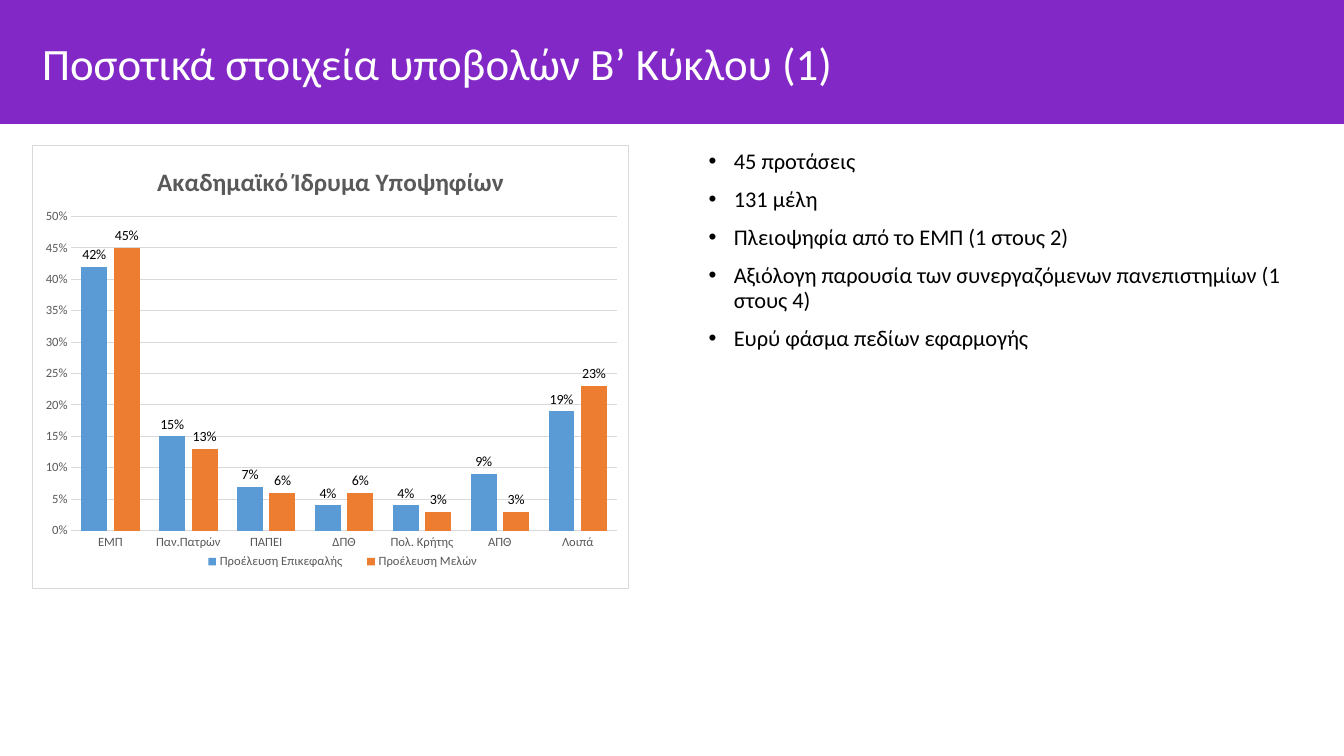
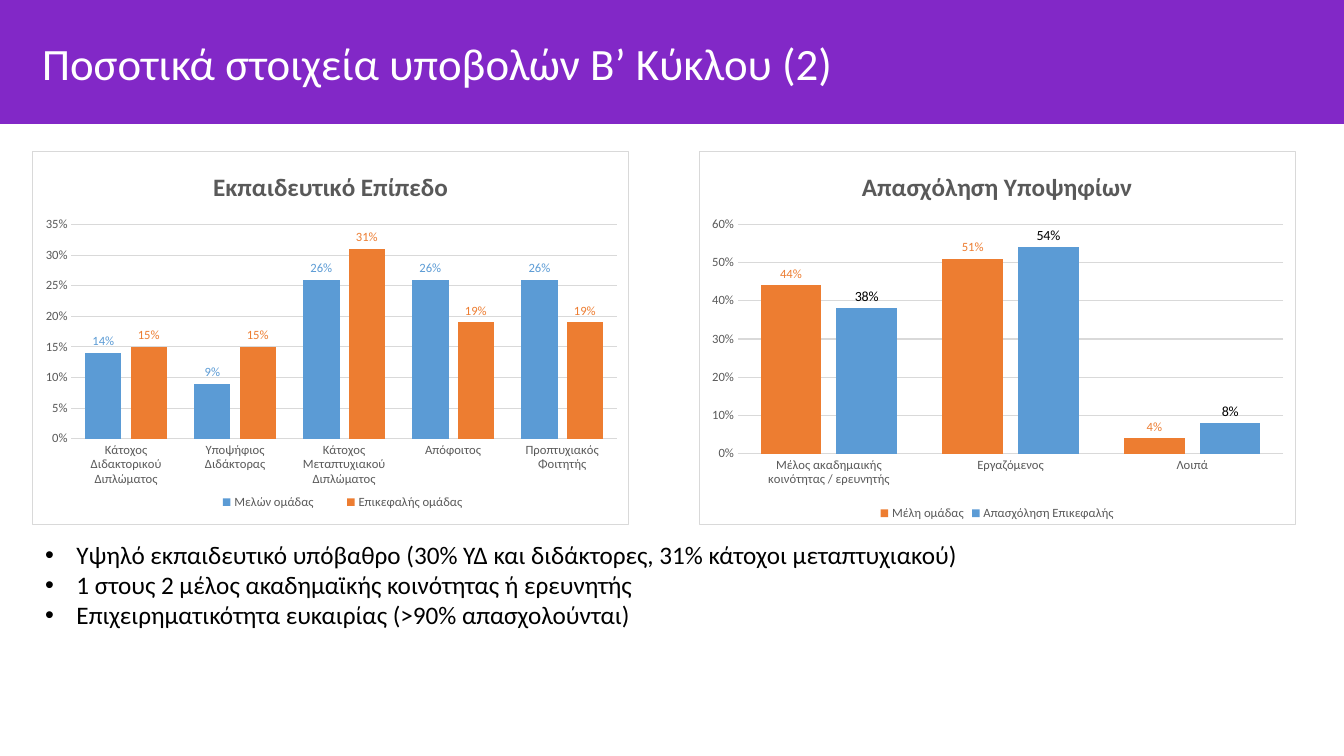
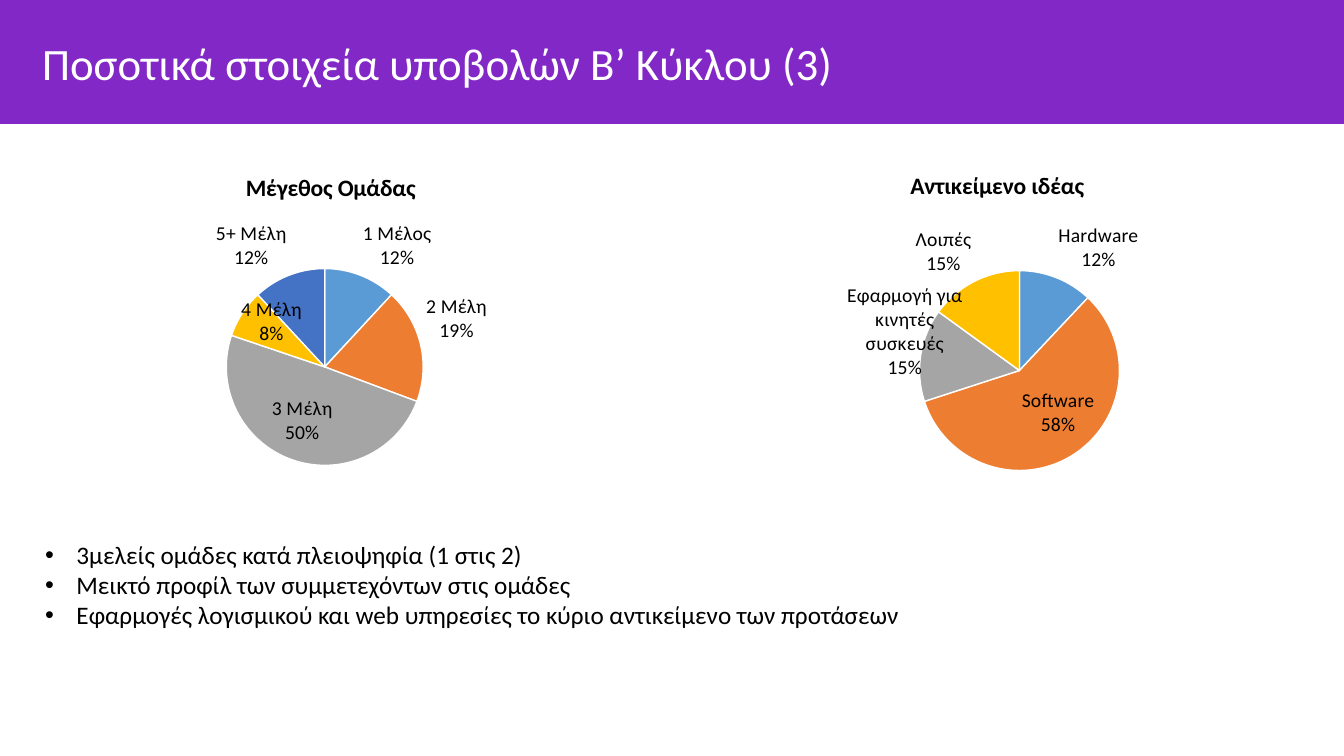
from pptx import Presentation
from pptx.chart.data import CategoryChartData
from pptx.dml.color import RGBColor
from pptx.enum.chart import XL_CHART_TYPE, XL_LABEL_POSITION, XL_LEGEND_POSITION, XL_TICK_MARK
from pptx.enum.shapes import MSO_SHAPE
from pptx.enum.text import MSO_ANCHOR
from pptx.oxml import parse_xml
from pptx.oxml.ns import nsdecls, qn
from pptx.oxml.xmlchemy import OxmlElement
from pptx.util import Inches, Pt

COLUMNS, PIE = XL_CHART_TYPE.COLUMN_CLUSTERED, XL_CHART_TYPE.PIE
OUTSIDE, CENTER = XL_LABEL_POSITION.OUTSIDE_END, XL_LABEL_POSITION.CENTER
INSIDE = XL_LABEL_POSITION.INSIDE_END
BOTTOM, NO_TICK = XL_LEGEND_POSITION.BOTTOM, XL_TICK_MARK.NONE

PURPLE = RGBColor(0x82, 0x28, 0xC7)
WHITE = RGBColor(0xFF, 0xFF, 0xFF)
BLACK = RGBColor(0, 0, 0)
GRAY = RGBColor(0x59, 0x59, 0x59)
RULE = RGBColor(0xD9, 0xD9, 0xD9)
BLUE = RGBColor(0x5B, 0x9B, 0xD5)
ORANGE = RGBColor(0xED, 0x7D, 0x31)
SILVER = RGBColor(0xA5, 0xA5, 0xA5)
GOLD = RGBColor(0xFF, 0xC0, 0x00)
NAVY = RGBColor(0x44, 0x72, 0xC4)
PIE_COLORS = (BLUE, ORANGE, SILVER, GOLD, NAVY)

FONT, BULLET_FONT = "Calibri", "Arial"
SLIDE_WIDTH, SLIDE_HEIGHT = 13.33, 7.5
LEFT, RIGHT, HALF = 0.32, 6.93, 5.92
NOTES_BOX = (0.35, 5.3, 11.49, 1.01)


def style_font(font, size, color, bold=False):
    font.name, font.size, font.bold = FONT, Pt(size), bold
    font.color.rgb = color


# Shared page parts
def add_page(deck, title):
    page = deck.slides.add_slide(deck.slide_layouts[6])
    band = page.shapes.add_shape(MSO_SHAPE.RECTANGLE, 0, 0, Inches(SLIDE_WIDTH), Inches(1.23))
    band.shadow.inherit = False
    band.fill.solid()
    band.fill.fore_color.rgb = PURPLE
    band.line.fill.background()
    frame = add_text_frame(page, (LEFT, 0.27, 12.52, 0.76))
    frame.vertical_anchor = MSO_ANCHOR.MIDDLE
    frame.text = title
    frame.paragraphs[0].line_spacing = 0.9
    style_font(frame.paragraphs[0].runs[0].font, 32, WHITE)
    return page


def add_text_frame(page, box):
    frame = page.shapes.add_textbox(*map(Inches, box)).text_frame
    frame.word_wrap = True
    return frame


def add_bullets(page, box, lines, size=18, indent=0.31, line_spacing=1.0, gap=0):
    frame = add_text_frame(page, box)
    frame.text = "\n".join(lines)
    for index, para in enumerate(frame.paragraphs):
        properties = para._p.get_or_add_pPr()
        properties.set("marL", str(Inches(indent)))
        properties.set("indent", str(-Inches(indent)))
        for tag, name, value in (("a:buFont", "typeface", BULLET_FONT), ("a:buChar", "char", "•")):
            bullet = OxmlElement(tag)
            bullet.set(name, value)
            properties.append(bullet)
        para.line_spacing = line_spacing
        para.space_before = Pt(gap if index else 0)
        style_font(para.runs[0].font, size, BLACK)


# Chart parts
def manual_layout(x, y, width=None, height=None, inner=False):
    """Layout element whose values are fractions of the chart."""
    layout = OxmlElement("c:layout")
    manual = OxmlElement("c:manualLayout")
    layout.append(manual)
    settings = [("layoutTarget", "inner")] if inner else []
    if width:
        settings += [("xMode", "edge"), ("yMode", "edge")]
    settings += [("x", x), ("y", y)]
    if width:
        settings += [("w", width), ("h", height)]
    for tag, value in settings:
        child = OxmlElement("c:" + tag)
        child.set("val", str(value))
        manual.append(child)
    return layout


def add_chart(page, kind, box, title, categories, series, plot_box, number_format):
    data = CategoryChartData(number_format=number_format)
    data.categories = categories
    for name, values in series:
        data.add_series(name, values)
    chart = page.shapes.add_chart(kind, *map(Inches, box), data).chart
    chart.has_title = True
    chart.chart_title.text_frame.text = title
    chart.chart_title.include_in_layout = False
    chart.has_legend = False
    area = chart.element.find(".//" + qn("c:plotArea"))
    for layout in area.findall(qn("c:layout")):
        area.remove(layout)
    area.insert(0, manual_layout(*plot_box, inner=True))
    return chart


def style_title(chart, size, color):
    span = chart.chart_title.text_frame.paragraphs[0].runs[0]
    style_font(span.font, size, color, bold=True)


def add_frame(chart):
    """White chart area with a thin gray border."""
    chart.element.find(qn("c:txPr")).addprevious(parse_xml(
        f'<c:spPr {nsdecls("c", "a")}><a:solidFill><a:srgbClr val="{WHITE}"/></a:solidFill>'
        f'<a:ln w="{Pt(0.75)}"><a:solidFill><a:srgbClr val="{RULE}"/></a:solidFill></a:ln></c:spPr>'))


def add_columns(page, box, title, categories, series, plot_box, top, step, legend_box=None):
    """Each series is name, values, fill colour, label size, label colour."""
    chart = add_chart(page, COLUMNS, box, title, categories,
                      [item[:2] for item in series], plot_box, "0%")
    style_font(chart.font, 10, BLACK)
    style_title(chart, 18, GRAY)
    add_frame(chart)
    # Axes
    for axis in (chart.category_axis, chart.value_axis):
        axis.major_tick_mark = axis.minor_tick_mark = NO_TICK
        style_font(axis.tick_labels.font, 9, GRAY)
    values_axis = chart.value_axis
    values_axis.minimum_scale, values_axis.maximum_scale = 0, top
    values_axis.major_unit = step
    values_axis.tick_labels.number_format = "0%"
    values_axis.tick_labels.number_format_is_linked = False
    values_axis.format.line.fill.background()
    for line in (chart.category_axis.format.line, values_axis.major_gridlines.format.line):
        line.color.rgb, line.width = RULE, Pt(0.75)
    # Legend
    chart.has_legend = True
    chart.legend.position = BOTTOM
    chart.legend.include_in_layout = False
    style_font(chart.legend.font, 9, GRAY)
    if legend_box:
        position = chart.legend._element.find(qn("c:legendPos"))
        position.addnext(manual_layout(*legend_box))
    # Columns and their labels
    plot = chart.plots[0]
    plot.gap_width, plot.overlap, plot.vary_by_categories = 75, -25, False
    for columns, (_, _, fill, size, color) in zip(plot.series, series):
        columns.format.fill.solid()
        columns.format.fill.fore_color.rgb = fill
        labels = columns.data_labels
        labels.show_value, labels.position = True, OUTSIDE
        labels.number_format, labels.number_format_is_linked = "0%", False
        style_font(labels.font, size, color)


def add_pie(page, box, title, slices, plot_box):
    """Each slice is name, value, label position, label offset or None."""
    names, values, positions, offsets = zip(*slices)
    chart = add_chart(page, PIE, box, title, names, [("Series 1", values)], plot_box, "0")
    style_font(chart.font, 14, BLACK)
    style_title(chart, 16.8, BLACK)
    pie = chart.plots[0].series[0]
    labels = pie.data_labels
    labels.show_category_name = labels.show_percentage = True
    labels.show_value = False
    labels.number_format, labels.number_format_is_linked = "0%", False
    style_font(labels.font, 14, BLACK)
    for index, (position, color) in enumerate(zip(positions, PIE_COLORS)):
        point = pie.points[index]
        point.format.fill.solid()
        point.format.fill.fore_color.rgb = color
        point.format.line.color.rgb, point.format.line.width = WHITE, Pt(1)
        style_font(point.data_label.font, 14, BLACK)
        point.data_label.position = position
    for label, offset in zip(labels._element.findall(qn("c:dLbl")), offsets):
        for tag, shown in (("showVal", "0"), ("showCatName", "1"), ("showPercent", "1")):
            label.find(qn("c:" + tag)).set("val", shown)
        if offset:
            label.find(qn("c:idx")).addnext(manual_layout(*offset))
    # No leader lines
    for leader in labels._element.findall(qn("c:showLeaderLines")):
        labels._element.remove(leader)
    leader = OxmlElement("c:showLeaderLines")
    leader.set("val", "0")
    labels._element.append(leader)


# Slides
def add_institutions(deck):
    page = add_page(deck, "Ποσοτικά στοιχεία υποβολών Β’ Κύκλου (1)")
    add_columns(
        page, (LEFT, 1.44, HALF, 4.4), "Ακαδημαϊκό Ίδρυμα Υποψηφίων",
        ["ΕΜΠ", "Παν.Πατρών", "ΠΑΠΕΙ", "ΔΠΘ", "Πολ. Κρήτης", "ΑΠΘ", "Λοιπά"],
        [("Προέλευση Επικεφαλής", (0.42, 0.15, 0.07, 0.04, 0.04, 0.09, 0.19), BLUE, 10, BLACK),
         ("Προέλευση Μελών", (0.45, 0.13, 0.06, 0.06, 0.03, 0.03, 0.23), ORANGE, 10, BLACK)],
        (0.065, 0.16, 0.915, 0.71), 0.5, 0.05, (0.26, 0.91, 0.52, 0.06))
    add_bullets(page, (RIGHT, 1.44, HALF, 4.4), [
        "45 προτάσεις",
        "131 μέλη",
        "Πλειοψηφία από το ΕΜΠ (1 στους 2)",
        "Αξιόλογη παρουσία των συνεργαζόμενων πανεπιστημίων (1 στους 4)",
        "Ευρύ φάσμα πεδίων εφαρμογής",
    ], size=16, indent=0.25, line_spacing=0.9, gap=10)


def add_backgrounds(deck):
    page = add_page(deck, "Ποσοτικά στοιχεία υποβολών Β’ Κύκλου (2)")
    add_columns(
        page, (LEFT, 1.5, HALF, 3.71), "Εκπαιδευτικό Επίπεδο",
        ["Κάτοχος Διδακτορικού Διπλώματος", "Υποψήφιος Διδάκτορας",
         "Κάτοχος Μεταπτυχιακού Διπλώματος", "Απόφοιτος", "Προπτυχιακός Φοιτητής"],
        [("Μελών ομάδας", (0.14, 0.09, 0.26, 0.26, 0.26), BLUE, 9, BLUE),
         ("Επικεφαλής ομάδας", (0.15, 0.15, 0.31, 0.19, 0.19), ORANGE, 9, ORANGE)],
        (0.065, 0.195, 0.915, 0.575), 0.35, 0.05, (0.27, 0.905, 0.5, 0.07))
    add_columns(
        page, (RIGHT, 1.5, HALF, 3.71), "Απασχόληση Υποψηφίων",
        ["Μέλος ακαδημαικής κοινότητας / ερευνητής", "Εργαζόμενος", "Λοιπά"],
        [("Μέλη ομάδας", (0.44, 0.51, 0.04), ORANGE, 9, ORANGE),
         ("Απασχόληση Επικεφαλής", (0.38, 0.54, 0.08), BLUE, 10, BLACK)],
        (0.065, 0.195, 0.915, 0.615), 0.6, 0.1)
    add_bullets(page, NOTES_BOX, [
        "Υψηλό εκπαιδευτικό υπόβαθρο (30% ΥΔ και διδάκτορες, 31% κάτοχοι μεταπτυχιακού)",
        "1 στους 2 μέλος ακαδημαϊκής κοινότητας ή ερευνητής",
        "Επιχειρηματικότητα ευκαιρίας (>90% απασχολούνται)",
    ])


def add_teams(deck):
    page = add_page(deck, "Ποσοτικά στοιχεία υποβολών Β’ Κύκλου (3)")
    add_pie(page, (RIGHT, 1.51, HALF, 3.72), "Αντικείμενο ιδέας", [
        ("Hardware", 12, OUTSIDE, None),
        ("Software", 58, CENTER, (0.02, 0)),
        ("Εφαρμογή για κινητές συσκευές", 15, OUTSIDE, (0.08, 0.07)),
        ("Λοιπές", 15, OUTSIDE, None),
    ], (0.37, 0.315, 0.335, 0.535))
    add_pie(page, (LEFT, 1.53, HALF, 3.72), "Μέγεθος Ομάδας", [
        ("1 Μέλος", 12, OUTSIDE, None),
        ("2 Μέλη", 19, OUTSIDE, None),
        ("3 Μέλη", 50, CENTER, (-0.01, 0.02)),
        ("4 Μέλη", 8, INSIDE, (-0.01, -0.05)),
        ("5+ Μέλη", 12, OUTSIDE, None),
    ], (0.325, 0.305, 0.33, 0.525))
    add_bullets(page, NOTES_BOX, [
        "3μελείς ομάδες κατά πλειοψηφία (1 στις 2)",
        "Μεικτό προφίλ των συμμετεχόντων στις ομάδες",
        "Εφαρμογές λογισμικού και web υπηρεσίες το κύριο αντικείμενο των προτάσεων",
    ])


def main():
    deck = Presentation()
    deck.slide_width, deck.slide_height = Inches(SLIDE_WIDTH), Inches(SLIDE_HEIGHT)
    add_institutions(deck)
    add_backgrounds(deck)
    add_teams(deck)
    deck.save("out.pptx")


if __name__ == "__main__":
    main()
